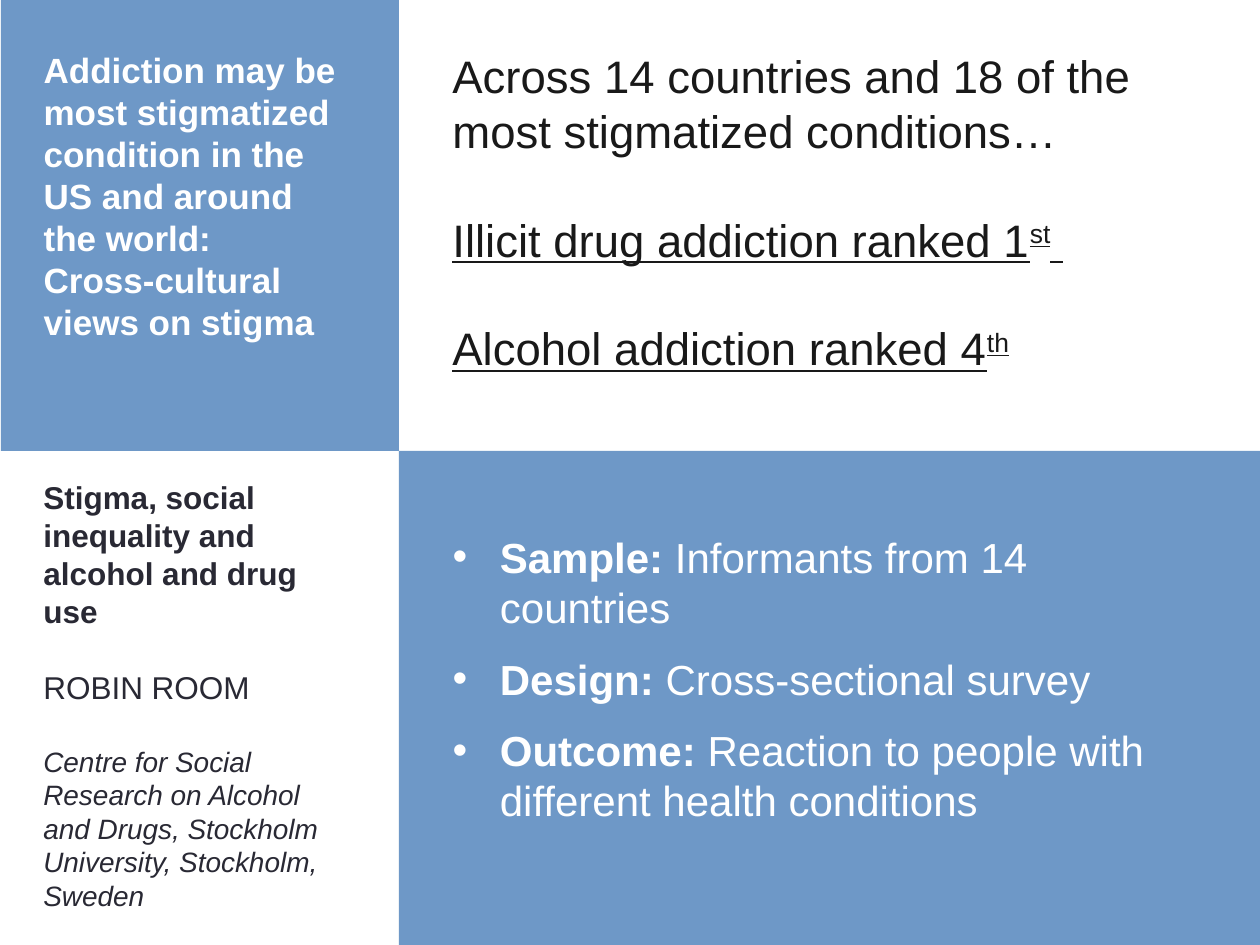
"""Builds a four-panel slide on how addiction is stigmatized across cultures."""
from pptx import Presentation
from pptx import util as u
from pptx.dml.color import RGBColor
from pptx.enum import shapes, text

PX = u.Inches(1) / 126
BLUE, WHITE, DARK, INK = "6E98C7", "FFFFFF", "191919", "292934"

PANELS = [(1, -1, 398, 452), (399, 451, 861, 494)]

# Each paragraph: size, gap before, gap after, base styles, runs of (text, styles)
HEAD = [
    (20, 0, 0, "b", [("Addiction may be most stigmatized condition in the US and around the world:", "")]),
    (20, 0, 0, "b", [("Cross-cultural views on stigma", "")]),
]
RANKS = [
    (26, 0, 0, "", [("Across 14 countries and 18 of the most stigmatized conditions…", "")]),
    (26, 31, 0, "u", [("Illicit drug addiction ranked 1", ""), ("st", "^"), (" ", "")]),
    (26, 31, 0, "u", [("Alcohol addiction ranked 4", ""), ("th", "^")]),
]
PAPER = [
    (18, 0, 0, "b", [("Stigma, social inequality and alcohol and drug use", "")]),
    (18, 22, 0, "", [("ROBIN ROOM", "")]),
    (16, 22, 0, "i", [("Centre for Social Research on Alcohol and Drugs, Stockholm University, Stockholm, Sweden", "")]),
]
STUDY = [
    (24, 0, 12, "", [(label, "b"), (fact, "")])
    for label, fact in [
        ("Sample: ", "Informants from 14 countries"),
        ("Design: ", "Cross-sectional survey"),
        ("Outcome: ", "Reaction to people with different health conditions"),
    ]
]


def px(n):
    return u.Emu(round(n * PX))


def color(code):
    return RGBColor.from_string(code)


def panel(slide, box):
    rect = slide.shapes.add_shape(shapes.MSO_SHAPE.RECTANGLE, *map(px, box))
    rect.shadow.inherit = False
    rect.fill.solid()
    rect.fill.fore_color.rgb = color(BLUE)
    rect.line.fill.background()
    slide.shapes._spTree.insert(2, rect._element)


def write(shape, box, paras, tint):
    shape.left, shape.top, shape.width, shape.height = map(px, box)
    frame = shape.text_frame
    frame.word_wrap = True
    frame.auto_size = text.MSO_AUTO_SIZE.NONE
    frame.vertical_anchor = text.MSO_ANCHOR.TOP
    for i, (size, before, after, style, runs) in enumerate(paras):
        para = frame.add_paragraph() if i else frame.paragraphs[0]
        para.alignment = text.PP_ALIGN.LEFT
        para.space_before, para.space_after = u.Pt(before), u.Pt(after)
        font = para.font
        font.name, font.size = "Arial", u.Pt(size)
        font.color.rgb = color(tint)
        font.bold, font.italic, font.underline = (k in style for k in "biu")
        for words, mark in runs:
            run = para.add_run()
            run.text = words
            if "b" in mark:
                run.font.bold = True
            if "^" in mark:
                run._r.get_or_add_rPr().set("baseline", "30000")


def main():
    deck = Presentation()
    deck.slide_width, deck.slide_height = px(1260), px(945)
    slide = deck.slides.add_slide(deck.slide_layouts[1])
    title, body = slide.placeholders
    for box in PANELS:
        panel(slide, box)
    write(title, (31, 42, 325, 310), HEAD, WHITE)
    write(body, (440, 525, 767, 310), STUDY, WHITE)
    for box, paras, tint in [
        ((440, 42, 725, 344), RANKS, DARK),
        ((31, 472, 325, 450), PAPER, INK),
    ]:
        write(slide.shapes.add_textbox(0, 0, 0, 0), box, paras, tint)
    deck.save("out.pptx")


if __name__ == "__main__":
    main()
